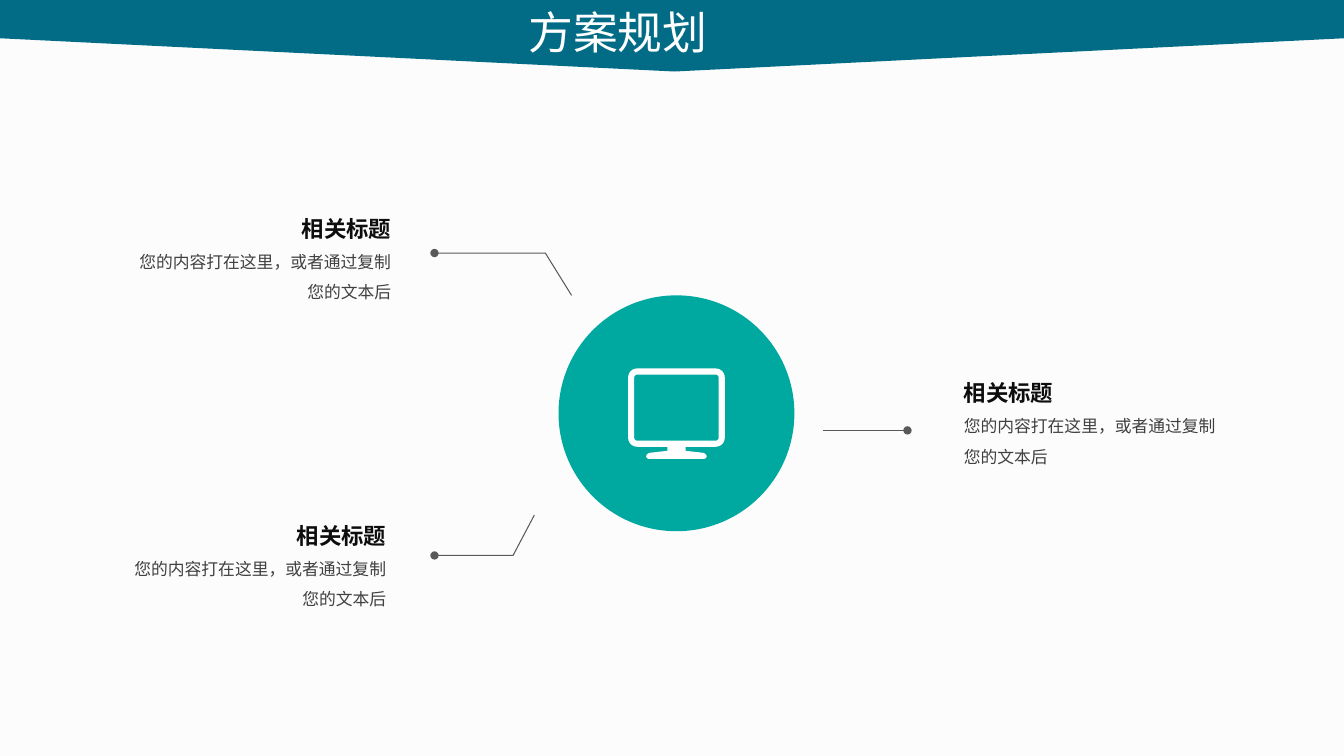
import collections
import math

import pptx
import pptx.dml.color
import pptx.enum.shapes
import pptx.enum.text
import pptx.oxml
import pptx.oxml.ns
import pptx.util

RGBColor = pptx.dml.color.RGBColor
PAPER = RGBColor(0xFC, 0xFC, 0xFC)
WHITE = RGBColor(0xFF, 0xFF, 0xFF)
BLUE = RGBColor(0x02, 0x6C, 0x86)
TEAL = RGBColor(0x00, 0xA9, 0x9F)
LEADER_GREY = RGBColor(0x59, 0x59, 0x59)
HEADING_BLACK = RGBColor(0x0D, 0x0D, 0x0D)
BODY_GREY = RGBColor(0x40, 0x40, 0x40)

CJK_FONT = "Noto Sans CJK SC"
LATIN_FONT = "Calibri"
ALIGN = pptx.enum.text.PP_ALIGN

SLIDE_WIDTH = pptx.util.Inches(13.33)
SLIDE_HEIGHT = pptx.util.Inches(7.5)

Box = collections.namedtuple("Box", "left top width height")


def cols(count):
    return round(SLIDE_WIDTH * count / 100)


def rows(count):
    return round(SLIDE_HEIGHT * count / 100)


def grid_box(left, top, width, height):
    return Box(cols(left), rows(top), cols(width), rows(height))


def add_drawing_tag(parent, tag, **attributes):
    child = pptx.oxml.parse_xml(f"<a:{tag} {pptx.oxml.ns.nsdecls('a')}/>")
    for name, value in attributes.items():
        child.set(name, value)
    parent.append(child)


def paint(shape, color):
    shape.shadow.inherit = False
    shape.fill.solid()
    shape.fill.fore_color.rgb = color
    shape.line.fill.background()


def write(shape, text, size, color, font, align, spacing=1.0, bold=False):
    frame = shape.text_frame
    frame.vertical_anchor = pptx.enum.text.MSO_ANCHOR.TOP
    para = frame.paragraphs[0]
    para.alignment = align
    para.line_spacing = spacing
    span = para.add_run()
    span.text = text
    span.font.size = pptx.util.Pt(size)
    span.font.bold = bold
    span.font.color.rgb = color
    span.font.name = font
    add_drawing_tag(span.font._element, "ea", typeface=CJK_FONT)


def add_banner(page, box, shoulder, tip):
    right = box.left + box.width
    builder = page.shapes.build_freeform(box.left, box.top)
    builder.add_line_segments([
        (right, box.top),
        (right, box.top + shoulder),
        (tip, box.top + box.height),
        (box.left, box.top + shoulder),
    ])
    banner = builder.convert_to_shape()
    paint(banner, BLUE)
    page.shapes.title.element.addprevious(banner.element)


def add_title(page, box, text):
    title = page.shapes.title
    title.left, title.top, title.width, title.height = box
    title.text_frame.auto_size = pptx.enum.text.MSO_AUTO_SIZE.NONE
    write(title, text, 32, WHITE, CJK_FONT, ALIGN.JUSTIFY)


def add_leader(page, points):
    points = [(cols(x), rows(y)) for x, y in points]
    if len(points) == 2:
        leader = page.shapes.add_connector(
            pptx.enum.shapes.MSO_CONNECTOR.STRAIGHT, *points[0], *points[1])
        add_drawing_tag(leader.element.spPr, "effectLst")
    else:
        builder = page.shapes.build_freeform(*points[0])
        builder.add_line_segments(points[1:], close=False)
        leader = builder.convert_to_shape()
        leader.shadow.inherit = False
        leader.fill.background()
    leader.line.color.rgb = LEADER_GREY
    leader.line.width = pptx.util.Pt(0.75)
    add_drawing_tag(leader.line._get_or_add_ln(), "tailEnd", type="oval")


def add_callout(page, box, heading, body, align):
    heading_width = cols(8.25)
    heading_left = box.left
    if align == ALIGN.RIGHT:
        heading_left += box.width - heading_width
    body_offset = rows(5.33)

    body_box = page.shapes.add_textbox(
        box.left, box.top + body_offset, box.width, box.height - body_offset)
    body_box.text_frame.word_wrap = True
    write(body_box, body, 12, BODY_GREY, LATIN_FONT, align, 1.5)

    heading_box = page.shapes.add_textbox(
        heading_left, box.top, heading_width, rows(6.13))
    heading_box.text_frame.word_wrap = False
    write(heading_box, heading, 16, HEADING_BLACK, CJK_FONT, align, 1.5, True)


def corner(x, y, radius, start):
    angles = [math.radians(start + step * 15) for step in range(7)]
    return [(x + radius * math.cos(a), y + radius * math.sin(a)) for a in angles]


def rounded_rectangle(left, top, right, bottom, radius):
    centres = [
        (left + radius, top + radius, 180),
        (right - radius, top + radius, 270),
        (right - radius, bottom - radius, 0),
        (left + radius, bottom - radius, 90),
    ]
    return [corner(x, y, radius, start) for x, y, start in centres]


def add_monitor(page, box):
    top_left, top_right, bottom_right, bottom_left = rounded_rectangle(
        0, 0, 950, 770, 90)
    half_stand = [(90, 770), (90, 810), (270, 830), (290, 845),
                  (298, 862), (290, 882), (268, 890)]
    stand = [(475 + x, y) for x, y in half_stand]
    stand += [(475 - x, y) for x, y in reversed(half_stand)]
    casing = top_left + top_right + bottom_right + stand + bottom_left
    screen = sum(rounded_rectangle(60, 60, 890, 710, 30), [])

    builder = page.shapes.build_freeform(*casing[0], scale=box.width / 950)
    builder.add_line_segments(casing[1:])
    builder.move_to(*screen[0])
    builder.add_line_segments(screen[1:])
    paint(builder.convert_to_shape(box.left, box.top), WHITE)


def add_hub(page, box):
    circle = page.shapes.add_shape(pptx.enum.shapes.MSO_SHAPE.OVAL, *box)
    paint(circle, TEAL)
    share = 0.41
    add_monitor(page, Box(
        round(box.left + box.width * (1 - share) / 2),
        round(box.top + box.height * 0.31),
        round(box.width * share),
        round(box.height * share)))


def build_plan_slide(deck):
    page = deck.slides.add_slide(deck.slide_layouts[5])
    page.background.fill.solid()
    page.background.fill.fore_color.rgb = PAPER

    add_banner(page, grid_box(0, 0, 100, 9.47), rows(5.07), cols(50.19))
    add_title(page, grid_box(38.56, 0, 22.88, 8.53), "方案规划")

    leaders = [
        [(42.53, 39.07), (40.58, 33.47), (32.33, 33.47)],
        [(39.76, 68.13), (38.18, 73.47), (32.33, 73.47)],
        [(61.22, 56.93), (67.52, 56.93)],
    ]
    for points in leaders:
        add_leader(page, points)

    callouts = [
        (9.15, 26, ALIGN.RIGHT),
        (8.78, 66.6, ALIGN.RIGHT),
        (70.97, 47.73, ALIGN.LEFT),
    ]
    for left, top, align in callouts:
        add_callout(page, grid_box(left, top, 20.7, 14.8), "相关标题",
                    "您的内容打在这里，或者通过复制您的文本后", align)

    add_hub(page, grid_box(41.56, 39.07, 17.55, 31.2))


def main():
    deck = pptx.Presentation()
    deck.slide_width = SLIDE_WIDTH
    deck.slide_height = SLIDE_HEIGHT
    build_plan_slide(deck)
    deck.save("out.pptx")


if __name__ == "__main__":
    main()
